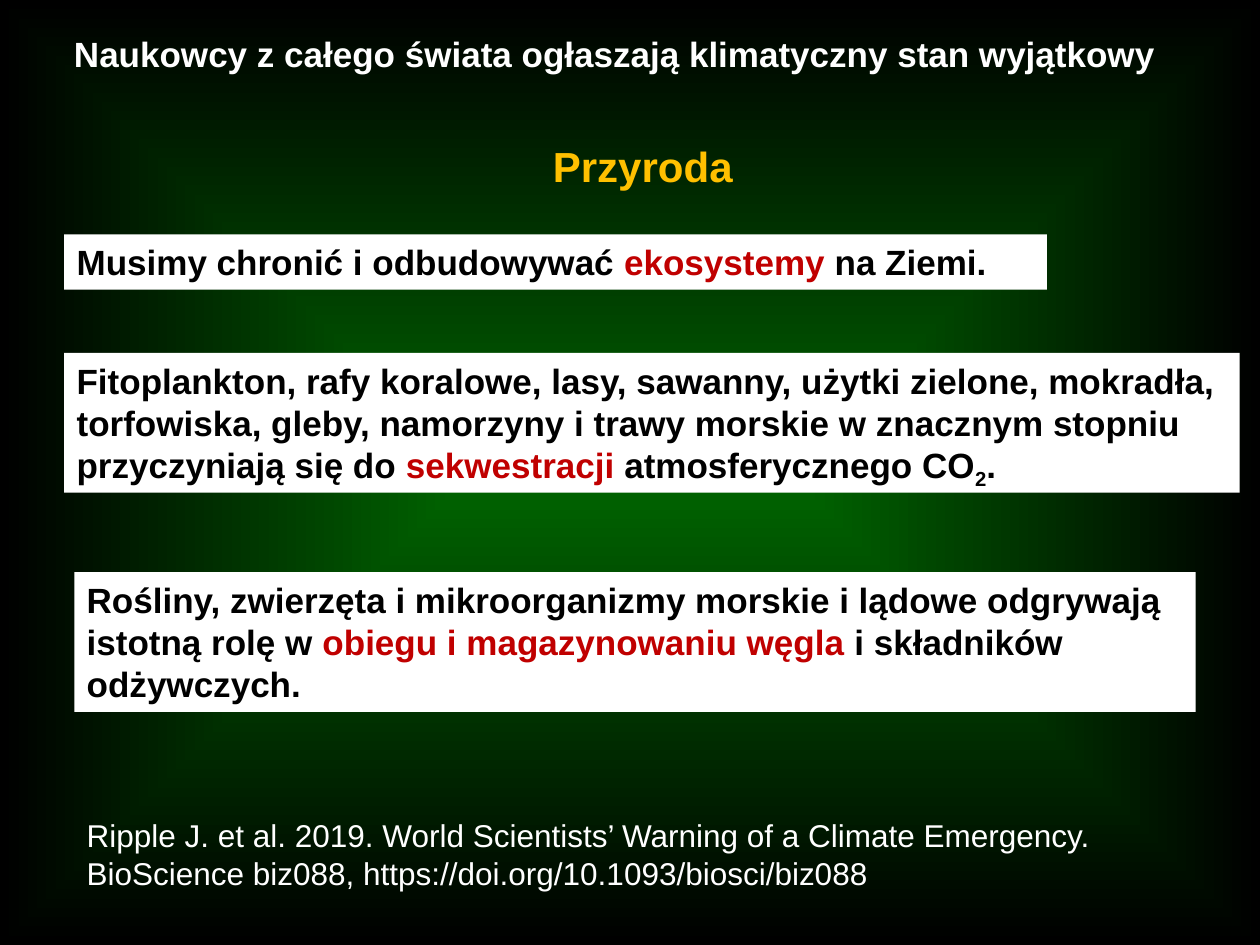
from lxml import etree
from pptx import Presentation
from pptx.dml.color import RGBColor
from pptx.enum.shapes import MSO_SHAPE
from pptx.enum.text import MSO_ANCHOR, MSO_AUTO_SIZE, PP_ALIGN
from pptx.util import Inches, Pt

RECTANGLE = MSO_SHAPE.RECTANGLE
TOP = MSO_ANCHOR.TOP
GROW = MSO_AUTO_SIZE.SHAPE_TO_FIT_TEXT
LEFT, CENTER = PP_ALIGN.LEFT, PP_ALIGN.CENTER

FONT = "Arial"
COLORS = {
    "white": "FFFFFF",
    "black": "000000",
    "green": "006600",
    "gold": "FFC000",
    "red": "C00000",
}

BACKGROUND = """
<p:bg xmlns:p="http://schemas.openxmlformats.org/presentationml/2006/main"
      xmlns:a="http://schemas.openxmlformats.org/drawingml/2006/main">
  <p:bgPr>
    <a:gradFill rotWithShape="1">
      <a:gsLst>
        <a:gs pos="0"><a:srgbClr val="{green}"/></a:gs>
        <a:gs pos="100000"><a:srgbClr val="{black}"/></a:gs>
      </a:gsLst>
      <a:path path="shape">
        <a:fillToRect l="50000" t="50000" r="50000" b="50000"/>
      </a:path>
    </a:gradFill>
    <a:effectLst/>
  </p:bgPr>
</p:bg>
"""

PANELS = [
    ((0.51, 1.86, 7.8, 0.44), [
        ("Musimy chronić i odbudowywać ", None),
        ("ekosystemy", "red"),
        (" na Ziemi.", None),
    ]),
    ((0.51, 2.8, 9.33, 1.11), [
        ("Fitoplankton, rafy koralowe, lasy, sawanny, użytki zielone, mokradła, "
         "torfowiska, gleby, namorzyny i trawy morskie w znacznym stopniu "
         "przyczyniają się do ", None),
        ("sekwestracji", "red"),
        (" atmosferycznego CO", None),
        ("2", "subscript"),
        (".", None),
    ]),
    ((0.59, 4.54, 8.9, 1.11), [
        ("Rośliny, zwierzęta i mikroorganizmy morskie i lądowe odgrywają "
         "istotną rolę w ", None),
        ("obiegu i magazynowaniu węgla ", "red"),
        ("i składników odżywczych.", None),
    ]),
]


def rgb(name):
    return RGBColor.from_string(COLORS[name])


def set_background(page):
    page.element.cSld.insert(0, etree.fromstring(BACKGROUND.format(**COLORS)))


def write_text(box, spans, size, color, bold=True, align=LEFT, wrap=True):
    frame = box.text_frame
    frame.word_wrap = wrap
    frame.auto_size = GROW
    frame.vertical_anchor = TOP
    para = frame.paragraphs[0]
    para.alignment = align
    para.font.name = FONT
    para.font.size = Pt(size)
    para.font.bold = bold
    para.font.color.rgb = rgb(color)
    for text, style in spans:
        span = para.add_run()
        span.text = text
        if style == "subscript":
            span.font._element.set("baseline", "-25000")
        span.font.color.rgb = rgb(style if style in COLORS else color)


def add_label(page, place, text, size, color, **options):
    box = page.shapes.add_textbox(*map(Inches, place))
    write_text(box, [(text, None)], size, color, **options)


def add_panel(page, place, spans):
    box = page.shapes.add_shape(RECTANGLE, *map(Inches, place))
    box.shadow.inherit = False
    box.fill.solid()
    box.fill.fore_color.rgb = rgb("white")
    box.line.fill.background()
    write_text(box, spans, 20, "black")


def main():
    deck = Presentation()
    deck.slide_width, deck.slide_height = Inches(10), Inches(7.5)
    page = deck.slides.add_slide(deck.slide_layouts[6])
    set_background(page)
    add_label(page, (0.35, 0.21, 9.06, 0.44),
              "Naukowcy z całego świata ogłaszają klimatyczny stan wyjątkowy",
              20, "white", align=CENTER)
    add_label(page, (4.29, 1.07, 1.64, 0.5), "Przyroda", 24, "gold", wrap=False)
    for place, spans in PANELS:
        add_panel(page, place, spans)
    add_label(page, (0.59, 6.43, 8.9, 0.71),
              "Ripple J. et al. 2019. World Scientists’ Warning of a Climate "
              "Emergency. BioScience biz088, https://doi.org/10.1093/biosci/biz088",
              18, "white", bold=False)
    deck.save("out.pptx")


if __name__ == "__main__":
    main()
